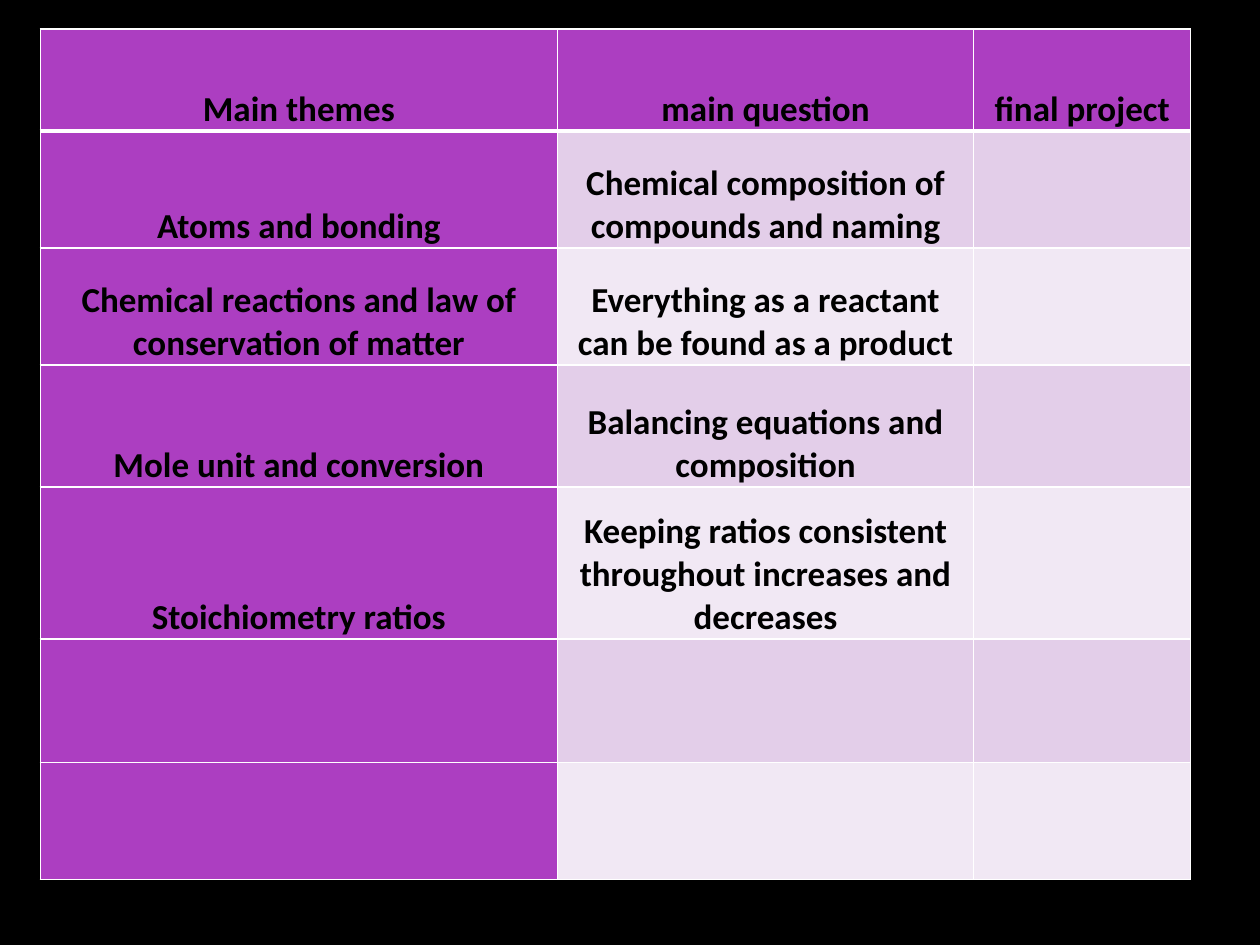
from lxml import etree
from pptx import Presentation
from pptx.dml.color import RGBColor
from pptx.enum.text import MSO_ANCHOR, PP_ALIGN
from pptx.oxml.ns import qn
from pptx.util import Inches, Pt

BOTTOM = MSO_ANCHOR.BOTTOM
CENTER = PP_ALIGN.CENTER
BLANK_LAYOUT = 6

BLACK, WHITE, PURPLE = "000000", "FFFFFF", "AC3EC1"
BANDS = ["F1E8F4", "E3CEE9"]

COLUMN_WIDTHS = [4.1, 3.3, 1.72]
ROW_HEIGHTS = [0.81, 0.93, 0.93, 0.97, 1.21, 0.98, 0.93]
THEMES = [
    ("Main themes", "main question", "final project"),
    ("Atoms and bonding", "Chemical composition of compounds and naming", ""),
    ("Chemical reactions and law of conservation of matter",
     "Everything as a reactant can be found as a product", ""),
    ("Mole unit and conversion", "Balancing equations and composition", ""),
    ("Stoichiometry ratios",
     "Keeping ratios consistent throughout increases and decreases", ""),
    ("", "", ""),
    ("", "", ""),
]


def paint(fill, color):
    """Give a fill one solid hex colour."""
    fill.solid()
    fill.fore_color.rgb = RGBColor.from_string(color)


def add_borders(cell, widths):
    """Draw white cell borders from a mapping of side to width in points."""
    properties = cell._tc.get_or_add_tcPr()
    for side, width in widths.items():
        line = etree.SubElement(properties, qn(f"a:ln{side}"), w=str(Pt(width)))
        solid = etree.SubElement(line, qn("a:solidFill"))
        etree.SubElement(solid, qn("a:srgbClr"), val=WHITE)


def format_cell(cell, text, color, borders):
    """Write one bottom-anchored, centred cell in bold black text."""
    add_borders(cell, borders)
    paint(cell.fill, color)
    cell.vertical_anchor = BOTTOM
    cell.margin_left = cell.margin_right = Inches(0.06)
    cell.margin_top = cell.margin_bottom = 0
    cell.text_frame.text = text
    paragraph = cell.text_frame.paragraphs[0]
    paragraph.alignment = CENTER
    font = paragraph.font
    if paragraph.runs:
        font = paragraph.runs[0].font
    font.name = "Calibri"
    font.size = Pt(20)
    font.bold = True
    font.color.rgb = RGBColor.from_string(BLACK)


def add_themes_table(slide, left, top, width, height):
    """Place the table of themes, questions and projects in the given box."""
    table = slide.shapes.add_table(
        len(THEMES), len(COLUMN_WIDTHS), left, top, width, height).table
    for column, column_width in zip(table.columns, COLUMN_WIDTHS):
        column.width = round(width * column_width / sum(COLUMN_WIDTHS))
    for row, row_height in zip(table.rows, ROW_HEIGHTS):
        row.height = round(height * row_height / sum(ROW_HEIGHTS))
    for r, texts in enumerate(THEMES):
        borders = {"L": 1, "R": 1, "T": 3 if r == 1 else 1, "B": 3 if r == 0 else 1}
        for c, text in enumerate(texts):
            color = PURPLE if r == 0 or c == 0 else BANDS[r % 2]
            format_cell(table.cell(r, c), text, color, borders)


def main():
    """Build the one-slide presentation."""
    presentation = Presentation()
    presentation.slide_width = Inches(10)
    presentation.slide_height = Inches(7.5)
    slide = presentation.slides.add_slide(presentation.slide_layouts[BLANK_LAYOUT])
    paint(slide.background.fill, BLACK)
    add_themes_table(slide, Inches(0.32), Inches(0.23), Inches(9.13), Inches(6.75))
    presentation.save("out.pptx")


if __name__ == "__main__":
    main()
